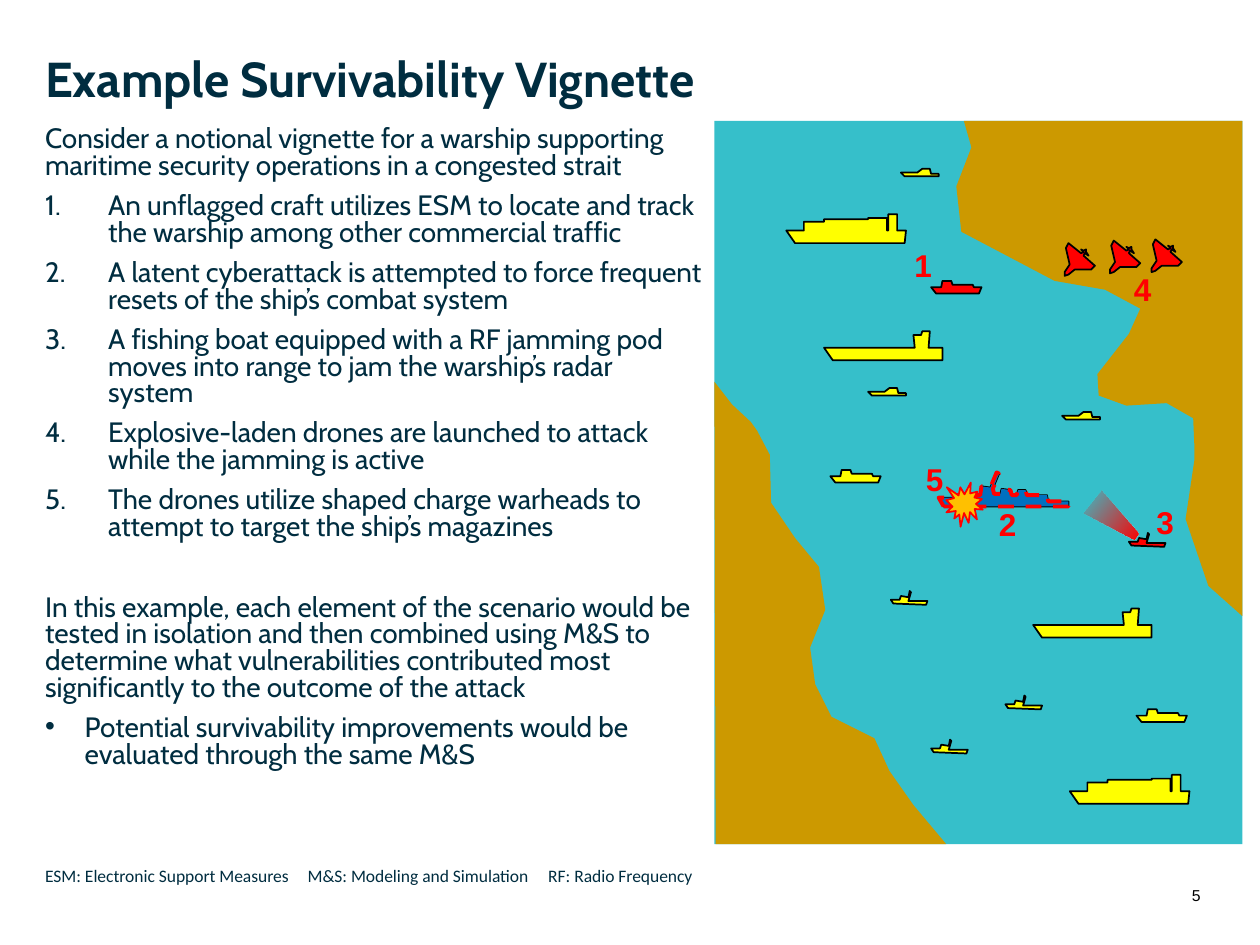
from lxml.etree import SubElement
from pptx import Presentation
from pptx.dml.color import RGBColor as Rgb
from pptx.enum.dml import MSO_LINE as Dash
from pptx.enum.shapes import MSO_SHAPE as Preset
from pptx.oxml.ns import qn
from pptx.util import Pt

COLORS = {
    "ink": "002D40", "black": "000000", "sea": "36BFCA", "land": "CC9900",
    "civil": "FFFF00", "threat": "FF0000", "navy": "0070C0", "blast": "FFC000",
}
TITLE = "Example Survivability Vignette"
INTRO = ("Consider a notional vignette for a warship supporting maritime "
         "security operations in a congested strait")
STEPS = [
    "An unflagged craft utilizes ESM to locate and track the warship among other commercial traffic",
    "A latent cyberattack is attempted to force frequent resets of the ship’s combat system",
    "A fishing boat equipped with a RF jamming pod moves into range to jam the warship’s radar system",
    "Explosive-laden drones are launched to attack while the jamming is active",
    "The drones utilize shaped charge warheads to attempt to target the ship’s magazines",
]
SUMMARY = ("In this example, each element of the scenario would be tested in isolation and then "
           "combined using M&S to determine what vulnerabilities contributed most significantly "
           "to the outcome of the attack")
OUTCOME = "Potential survivability improvements would be evaluated through the same M&S"
ACRONYMS = ["ESM: Electronic Support Measures", "M&S: Modeling and Simulation", "RF: Radio Frequency"]
ACRONYM_TABS = [150, 287.5]
PAGE = "5"

GRID = 0.72
SEA = (567, 96, 419, 574)
COASTS = [
    [(567, 303), (568, 670), (751, 670), (725, 639), (706, 612), (694, 586), (660, 569),
     (647, 543), (643, 514), (655, 484), (650, 450), (631, 427), (612, 399), (611, 361),
     (601, 342), (596, 335), (581, 321)],
    [(765, 96), (986, 96), (986, 489), (959, 465), (941, 412), (948, 365), (948, 355),
     (947, 332), (926, 320), (894, 322), (872, 314), (871, 297), (896, 265), (905, 245),
     (877, 230), (837, 223), (763, 184), (759, 148), (771, 117)],
]
HULLS = {
    "tanker": [(0, 13), (7, 23), (94, 23), (94, 13), (83, 13), (84, 0), (78, 0), (77, 3),
               (71, 3), (72, 13)],
    "freighter": [(0, 13), (7, 23), (94, 23), (95, 13), (88, 13), (88, 0), (81, 0), (81, 13),
                  (80, 13), (80, 3), (65, 3), (65, 4), (30, 4), (30, 6), (14, 6), (14, 13)],
    "coaster": [(4, 10), (0, 5), (8, 5), (9, 0), (16, 0), (17, 3), (33, 3), (34, 5), (40, 5),
                (38, 10)],
    "fishing boat": [(2, 10), (0, 7), (7, 7), (8, 4), (14, 5), (15, 0), (16, 1), (14, 8),
                     (29, 8), (28, 11)],
    "launch": [(0, 3), (3, 6), (30, 6), (30, 4), (24, 4), (23, 0), (17, 0), (13, 3)],
    "warship": [(4, 27), (0, 20), (14, 20), (15, 18), (18, 18), (18, 21), (29, 21), (29, 18),
                (33, 18), (34, 11), (41, 12), (46, 0), (48, 1), (43, 13), (44, 17), (49, 17),
                (50, 13), (57, 14), (58, 18), (62, 18), (63, 14), (69, 14), (70, 18), (86, 18),
                (87, 23), (103, 23), (103, 27)],
    "drone": [(1, 4), (3, 0), (13, 8), (15, 7), (13, 5), (15, 6), (17, 5), (17, 7), (19, 10),
              (16, 8), (15, 10), (24, 18), (21, 21), (8, 21), (3, 25), (0, 26), (0, 23), (4, 17)],
}
FLEET = [
    ("tanker", "civil", [(820, 483), (654, 263)]),
    ("freighter", "civil", [(624, 170), (849, 615)]),
    ("coaster", "civil", [(659, 373), (902, 563)]),
    ("fishing boat", "civil", [(707, 469), (739, 587), (798, 552)]),
    ("launch", "civil", [(689, 308), (715, 134), (843, 327)]),
    ("warship", "navy", [(745, 375)]),
    ("coaster", "threat", [(739, 223)]),
    ("drone", "threat", [(881, 191), (914, 190), (845, 193)]),
    ("fishing boat", "threat", [(896, 423)]),
]
WARSHIP_AT = (745, 375)
BLAST = (751, 383, 29, 35)
JAMMING = (873, 390, 23, 44)
MARKERS = [("1", 716, 190), ("2", 783, 396), ("3", 908, 394), ("4", 890, 209), ("5", 725, 360)]

prs = Presentation()
prs.slide_width, prs.slide_height = Pt(720), Pt(540)
slide = prs.slides.add_slide(prs.slide_layouts[6])
shapes = slide.shapes


def color(name):
    return Rgb.from_string(COLORS[name])


def paint(shape, fill, line=None, width=1):
    shape.shadow.inherit = False
    if fill:
        shape.fill.solid()
        shape.fill.fore_color.rgb = color(fill)
    if line:
        shape.line.color.rgb = color(line)
        shape.line.width = Pt(width)
    else:
        shape.line.fill.background()
    return shape


def outline(points, fill, line=None, width=1, origin=(0, 0)):
    pen = shapes.build_freeform(*points[0], scale=Pt(GRID))
    pen.add_line_segments(points[1:], close=True)
    left, top = (Pt(v * GRID) for v in origin)
    return paint(pen.convert_to_shape(left, top), fill, line, width)


def preset(kind, place):
    return shapes.add_shape(kind, *(Pt(v * GRID) for v in place))


def textbox(place, wrap=True):
    frame = shapes.add_textbox(*(Pt(v) for v in place)).text_frame
    frame.word_wrap = wrap
    return frame


def style(paragraph, size, font, ink="ink", bold=False):
    for run in paragraph.runs:
        run.font.size, run.font.name, run.font.bold = Pt(size), font, bold
        run.font.color.rgb = color(ink)


def line_of_text(place, text, size, font, ink="ink", bold=False, wrap=True):
    frame = textbox(place, wrap)
    frame.text = text
    style(frame.paragraphs[0], size, font, ink, bold)
    return frame.paragraphs[0]


def add_bullet(paragraph, indent, tag, **attributes):
    props = paragraph._p.get_or_add_pPr()
    props.set("marL", str(Pt(indent)))
    props.set("indent", str(-Pt(indent)))
    SubElement(props, qn("a:buFont"), typeface="Arial" if tag == "a:buChar" else "+mj-lt")
    SubElement(props, qn(tag), **attributes)


paint(preset(Preset.RECTANGLE, SEA), "sea")
for coast in COASTS:
    outline(coast, "land")

body = textbox((18.75, 69, 389.5, 413.5))
passages = [(INTRO, 0, None)]
passages += [(step, 7.5, (36, "a:buAutoNum", {"type": "arabicPeriod"})) for step in STEPS]
passages += [(SUMMARY, 30.5, None), (OUTCOME, 7.5, (22.5, "a:buChar", {"char": "•"}))]
for i, (text, gap, bullet) in enumerate(passages):
    paragraph = body.add_paragraph() if i else body.paragraphs[0]
    paragraph.text = text
    if bullet:
        indent, tag, attributes = bullet
        add_bullet(paragraph, indent, tag, **attributes)
    paragraph.line_spacing = 0.8
    if gap:
        paragraph.space_before = Pt(gap)
    style(paragraph, 16, "Cabin")

line_of_text((18.75, 24, 683, 72), TITLE, 28, "Cabin", bold=True)
footer = line_of_text((18.75, 490.5, 587.5, 43), "\t".join(ACRONYMS), 10, "Calibri")
tabs = SubElement(footer._p.get_or_add_pPr(), qn("a:tabLst"))
for stop in ACRONYM_TABS:
    SubElement(tabs, qn("a:tab"), pos=str(Pt(stop)), algn="l")
line_of_text((674, 502.5, 28, 19.5), PAGE, 9, "Arial", "black")

for hull, side, berths in FLEET:
    for berth in berths:
        outline(HULLS[hull], side, "black", origin=berth)

cyberattack = outline(HULLS["warship"], "navy", "threat", 2.25, WARSHIP_AT)
cyberattack.line.dash_style = Dash.DASH
paint(preset(Preset.EXPLOSION1, BLAST), "blast", "threat")

jamming = paint(preset(Preset.TRAPEZOID, JAMMING), None)
jamming.adjustments[0] = 0.36
jamming.rotation = 128.6
jamming.fill.gradient()
jamming.fill.gradient_angle = 270
for stop, position in zip(jamming.fill.gradient_stops, (0, 1)):
    stop.color.rgb = color("threat")
    stop.position = position
faded = jamming._element.spPr.findall(".//" + qn("a:srgbClr"))[-1]
SubElement(faded, qn("a:alpha"), val="0")

for number, x, y in MARKERS:
    line_of_text((x * GRID, y * GRID, 24.5, 29), number, 18, "Arial", "threat", True, wrap=False)

prs.save("out.pptx")
